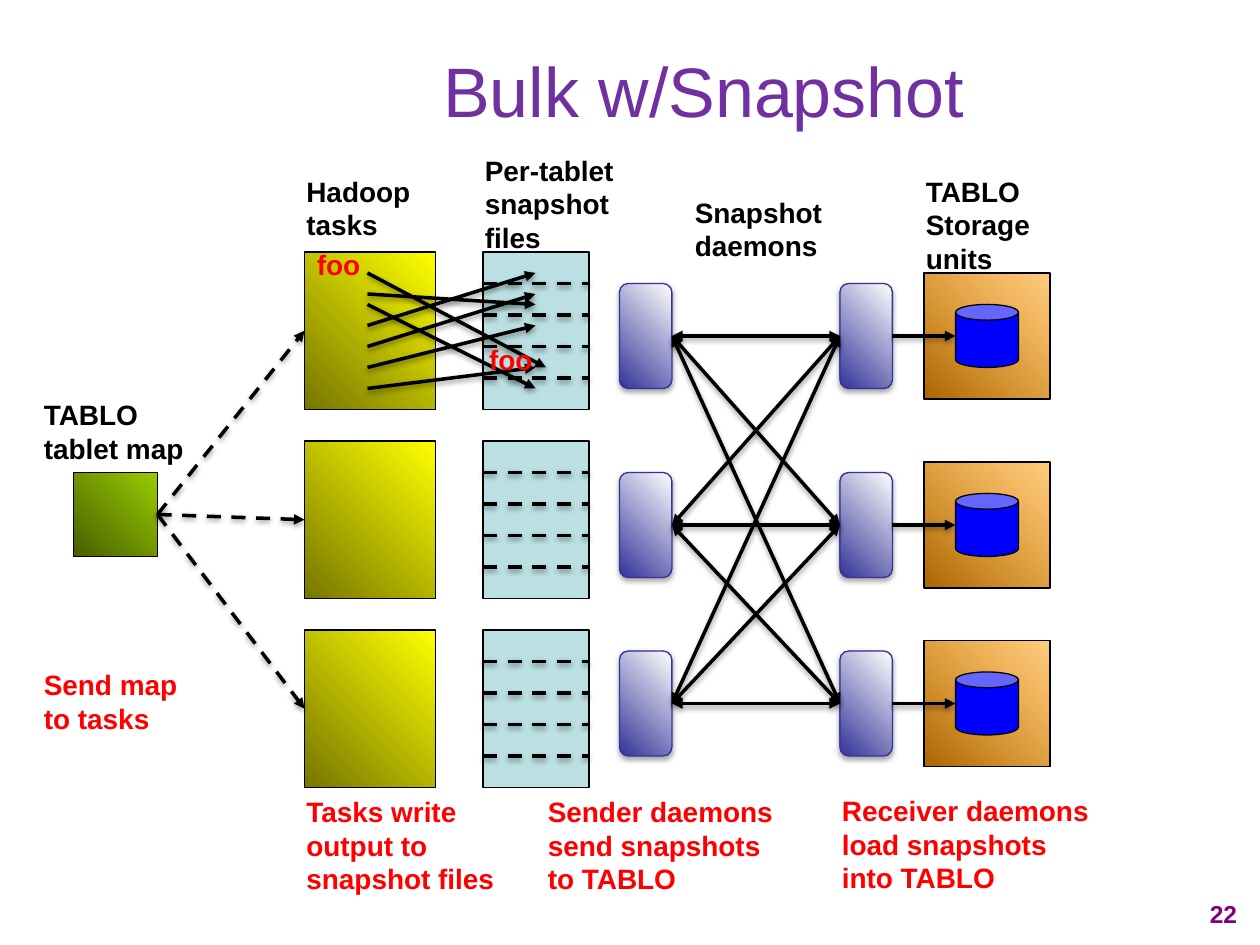
from dataclasses import dataclass
from itertools import product
from typing import Optional

from lxml import etree
from pptx import Presentation
from pptx.dml.color import RGBColor
from pptx.enum.dml import MSO_LINE
from pptx.enum.shapes import MSO_CONNECTOR, MSO_SHAPE
from pptx.enum.text import MSO_ANCHOR, MSO_AUTO_SIZE, PP_ALIGN
from pptx.oxml.ns import qn
from pptx.util import Pt

PX = 7620  # EMU per px, 120 px to the inch
FONT = "Arial"
RECTANGLE = MSO_SHAPE.RECTANGLE
ROUNDED = MSO_SHAPE.ROUNDED_RECTANGLE
CAN = MSO_SHAPE.CAN
STRAIGHT = MSO_CONNECTOR.STRAIGHT
DASH = MSO_LINE.DASH
CENTER, RIGHT = PP_ALIGN.CENTER, PP_ALIGN.RIGHT
MIDDLE = MSO_ANCHOR.MIDDLE
GROW = MSO_AUTO_SIZE.SHAPE_TO_FIT_TEXT
LEFT_SIDE, RIGHT_SIDE = 1, 3

BLACK = RGBColor(0x00, 0x00, 0x00)
WHITE = RGBColor(0xFF, 0xFF, 0xFF)
RED = RGBColor(0xFF, 0x00, 0x00)
BLUE = RGBColor(0x00, 0x00, 0xFF)
INDIGO = RGBColor(0x33, 0x33, 0x99)
PALE_BLUE = RGBColor(0xBB, 0xE0, 0xE3)
OLIVE = RGBColor(0x76, 0x76, 0x00)
YELLOW = RGBColor(0xFF, 0xFF, 0x00)
BROWN = RGBColor(0xA9, 0x65, 0x00)
ORANGE = RGBColor(0xFF, 0x99, 0x00)
DARK_GREEN = RGBColor(0x47, 0x5E, 0x00)
GREEN = RGBColor(0x99, 0xCC, 0x00)
TITLE_PURPLE = RGBColor(0x70, 0x30, 0xA0)
NUMBER_PURPLE = RGBColor(0x80, 0x00, 0x80)


@dataclass(frozen=True)
class BoxStyle:
    kind: int
    width: int
    height: int
    color: RGBColor
    light: Optional[RGBColor] = None  # gradient end, towards the top right
    light_opacity: int = 100
    outline: RGBColor = BLACK
    shadow: bool = False


@dataclass(frozen=True)
class Label:
    text: str
    left: int
    top: int
    width: int
    height: int
    color: RGBColor = BLACK
    wrap: bool = True


TASK = BoxStyle(RECTANGLE, 125, 150, OLIVE, YELLOW)
FILE = BoxStyle(RECTANGLE, 101, 150, PALE_BLUE)
DAEMON = BoxStyle(ROUNDED, 50, 100, INDIGO, WHITE, outline=INDIGO, shadow=True)
STORAGE = BoxStyle(RECTANGLE, 120, 120, BROWN, ORANGE, light_opacity=50)
DISK = BoxStyle(CAN, 60, 60, BLUE)
TABLET_MAP = BoxStyle(RECTANGLE, 80, 80, DARK_GREEN, GREEN)

TASK_CENTERS = (315, 495, 675)
DAEMON_CENTERS = (320, 500, 670)
# Start and end heights of the lines from the first task to its snapshot file
WRITES = ((280, 290), (290, 370), (310, 260), (330, 280), (350, 310), (370, 350))

LABELS = (
    Label("Snapshot daemons", 650, 180, 180, 77),
    Label("Per-tablet snapshot files", 450, 140, 180, 109),
    Label("TABLO tablet map", 30, 373, 180, 77),
    Label("Hadoop tasks", 280, 160, 180, 77),
    Label("TABLO Storage units", 870, 160, 160, 109),
    Label("Send map to tasks", 30, 630, 170, 77, RED),
    Label("Tasks write output to snapshot files", 280, 751, 250, 109, RED),
    Label("Sender daemons send snapshots to TABLO", 510, 751, 250, 109, RED),
    Label("Receiver daemons load snapshots into TABLO", 790, 750, 270, 109, RED),
    Label("foo", 290, 230, 66, 44, RED, wrap=False),
    Label("foo", 454, 320, 66, 44, RED, wrap=False),
)


def place(left, top, width, height) -> tuple:
    return tuple(round(value * PX) for value in (left, top, width, height))


def add_shadow(shape, opacity: int, distance: int) -> None:
    effects = etree.SubElement(shape._element.spPr, qn("a:effectLst"))
    shadow = etree.SubElement(effects, qn("a:outerShdw"), blurRad="40000",
                              dist=str(distance), dir="5400000", rotWithShape="0")
    color = etree.SubElement(shadow, qn("a:srgbClr"), val="000000")
    etree.SubElement(color, qn("a:alpha"), val=str(opacity * 1000))


def add_box(slide, style: BoxStyle, left: int, center: int):
    """Draw a box whose vertical middle is at center."""
    shape = slide.shapes.add_shape(
        style.kind, *place(left, center - style.height / 2, style.width, style.height))
    if style.light is None:
        shape.fill.solid()
        shape.fill.fore_color.rgb = style.color
    else:
        shape.fill.gradient()
        shape.fill.gradient_angle = 45
        for stop, color in zip(shape.fill.gradient_stops, (style.color, style.light)):
            stop.color.rgb = color
        if style.light_opacity < 100:
            light = list(shape._element.spPr.iter(qn("a:srgbClr")))[-1]
            etree.SubElement(light, qn("a:alpha"), val=str(style.light_opacity * 1000))
    shape.line.color.rgb = style.outline
    shape.line.width = Pt(0.75)
    if style.shadow:
        add_shadow(shape, 35, 23000)
    else:
        shape.shadow.inherit = False
    return shape


def add_line(slide, start=(0, 0), end=(0, 0), source=None, target=None,
             dashed: bool = False, head: bool = False, tail: bool = True) -> None:
    """Draw a line; source and target boxes are joined right side to left side."""
    line = slide.shapes.add_connector(STRAIGHT, *place(*start, *end))
    if source is not None:
        line.begin_connect(source, RIGHT_SIDE)
    if target is not None:
        line.end_connect(target, LEFT_SIDE)
    line.line.color.rgb = BLACK
    line.line.width = Pt(2)
    if dashed:
        line.line.dash_style = DASH
    outline = line.line._get_or_add_ln()
    for tag, shown in (("a:headEnd", head), ("a:tailEnd", tail)):
        if shown:
            etree.SubElement(outline, qn(tag), type="triangle")
    add_shadow(line, 38, 20000)


def format_text(shape, size: int, color: RGBColor, bold: bool = True, align=None) -> None:
    for paragraph in shape.text_frame.paragraphs:
        paragraph.alignment = align
        for run in paragraph.runs:
            run.font.name = FONT
            run.font.size = Pt(size)
            run.font.bold = bold
            run.font.color.rgb = color


def add_label(slide, label: Label, size: int = 16, align=None) -> None:
    box = slide.shapes.add_textbox(
        *place(label.left, label.top, label.width, label.height))
    box.text_frame.text = label.text
    box.text_frame.word_wrap = label.wrap
    box.text_frame.auto_size = GROW
    format_text(box, size, label.color, align=align)


def main() -> None:
    presentation = Presentation()
    presentation.slide_width, presentation.slide_height = 1200 * PX, 900 * PX
    slide = presentation.slides.add_slide(presentation.slide_layouts[5])

    # Title and slide number
    title = slide.shapes.title
    title.left, title.top, title.width, title.height = place(130, 10, 1080, 150)
    title.text_frame.text = "Bulk w/Snapshot"
    title.text_frame.vertical_anchor = MIDDLE
    format_text(title, 40, TITLE_PURPLE, bold=False, align=CENTER)
    add_label(slide, Label("22", 1120, 850, 70, 40, NUMBER_PURPLE), 14, RIGHT)

    # Snapshot files, each divided into tablets
    for center in TASK_CENTERS:
        add_box(slide, FILE, 460, center)
        for offset in range(-45, 46, 30):
            add_line(slide, (460, center + offset), (561, center + offset),
                     dashed=True, tail=False)

    # Tablet map sent to the tasks
    tablet_map = add_box(slide, TABLET_MAP, 70, 490)
    for center in TASK_CENTERS:
        task = add_box(slide, TASK, 290, center)
        add_line(slide, source=tablet_map, target=task, dashed=True)

    # First task writing to its snapshot file
    add_line(slide, (350, 260), (520, 350))
    for start, end in WRITES:
        add_line(slide, (350, start), (510, end))

    # Sender and receiver daemons, all linked both ways
    senders = [add_box(slide, DAEMON, 590, center) for center in DAEMON_CENTERS]
    receivers = [add_box(slide, DAEMON, 800, center) for center in DAEMON_CENTERS]
    for sender, receiver in product(senders, receivers):
        add_line(slide, source=sender, target=receiver, head=True)

    # Storage units loaded by the receivers
    for center, receiver in zip(DAEMON_CENTERS, receivers):
        add_box(slide, STORAGE, 880, center)
        add_box(slide, DISK, 910, center)
        add_line(slide, (850, center), (910, center), source=receiver)

    for label in LABELS:
        add_label(slide, label)

    presentation.save("out.pptx")


if __name__ == "__main__":
    main()
